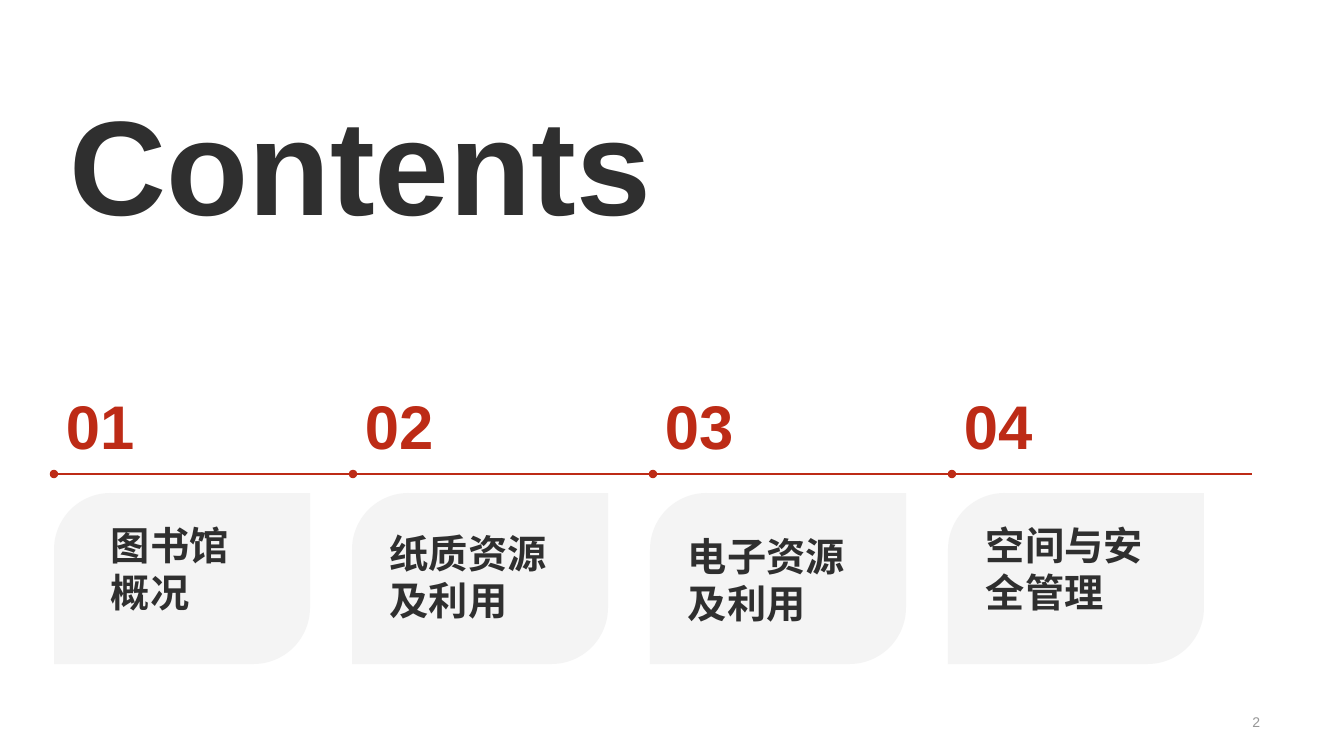
from dataclasses import dataclass

from lxml.etree import SubElement
from pptx import Presentation
from pptx.dml.color import RGBColor
from pptx.enum.shapes import MSO_CONNECTOR, MSO_SHAPE
from pptx.enum.text import MSO_ANCHOR, MSO_AUTO_SIZE, PP_ALIGN
from pptx.oxml.ns import qn
from pptx.util import Pt


@dataclass(frozen=True)
class Theme:
    font: str = "Arial"
    red: RGBColor = RGBColor(0xBD, 0x2B, 0x16)
    ink: RGBColor = RGBColor(0x2F, 0x2F, 0x2F)
    grey: RGBColor = RGBColor(0x97, 0x97, 0x97)
    card: RGBColor = RGBColor(0xCB, 0xCB, 0xCB)
    title_size: int = 96
    number_size: int = 44
    label_size: int = 28
    page_size: int = 10
    line_width: int = 2


theme = Theme()
PX = 914400 / 100.8


def px(*lengths):
    return [round(length * PX) for length in lengths]


def write(box, text, size, color, bold=True, anchor=MSO_ANCHOR.BOTTOM,
          align=PP_ALIGN.LEFT, wrap=True, fit=MSO_AUTO_SIZE.SHAPE_TO_FIT_TEXT):
    frame = box.text_frame
    frame.word_wrap = wrap
    frame.auto_size = fit
    frame.vertical_anchor = anchor
    paragraph = frame.paragraphs[0]
    paragraph.alignment = align
    run = paragraph.add_run()
    run.text = text
    run.font.name = theme.font
    run.font.size = Pt(size)
    run.font.bold = bold
    run.font.color.rgb = color
    return frame


prs = Presentation()
prs.slide_width, prs.slide_height = px(1344, 756)
slide = prs.slides.add_slide(prs.slide_layouts[5])
shapes = slide.shapes

heading = shapes.title
heading.left, heading.top, heading.width, heading.height = px(59, 76, 873, 173)
write(heading, "Contents", theme.title_size, theme.ink, anchor=MSO_ANCHOR.TOP)

page_number = shapes.add_textbox(*px(977, 710, 293, 24))
write(page_number, "2", theme.page_size, theme.grey, bold=False,
      anchor=MSO_ANCHOR.MIDDLE, align=PP_ALIGN.RIGHT, fit=MSO_AUTO_SIZE.NONE)

LEFT = 54
TIMELINE_Y, TIMELINE_WIDTH = 474, 1198
CARD_STEP, CARD_TOP, CARD_WIDTH, CARD_HEIGHT = 298, 493, 256, 171
NUMBER_WIDTH, NUMBER_HEIGHT, NUMBER_INSET = 94, 99, 12
LABEL_HEIGHT = 105

chapters = [
    ("图书馆概况", 162, 515),
    ("纸质资源及利用", 200, 523),
    ("电子资源及利用", 200, 526),
    ("空间与安全管理", 200, 515),
]

for index, (chapter, label_width, label_top) in enumerate(chapters):
    start, end = (LEFT + TIMELINE_WIDTH * i // len(chapters) for i in (index, index + 1))
    segment = shapes.add_connector(
        MSO_CONNECTOR.STRAIGHT, *px(start, TIMELINE_Y, end, TIMELINE_Y))
    segment.line.color.rgb = theme.red
    segment.line.width = Pt(theme.line_width)
    SubElement(segment.line._get_or_add_ln(), qn("a:headEnd"), type="oval")
    SubElement(segment._element.spPr, qn("a:effectLst"))

    number = shapes.add_textbox(
        *px(start, TIMELINE_Y - NUMBER_HEIGHT, NUMBER_WIDTH, NUMBER_HEIGHT))
    frame = write(number, f"{index + 1:02}", theme.number_size, theme.red, wrap=False)
    frame.margin_left, frame.margin_top, frame.margin_right, frame.margin_bottom = px(
        *[NUMBER_INSET] * 4)

    card_left = LEFT + CARD_STEP * index
    card = shapes.add_shape(
        MSO_SHAPE.ROUND_2_DIAG_RECTANGLE,
        *px(card_left, CARD_TOP, CARD_WIDTH, CARD_HEIGHT))
    card.adjustments[0] = 0.33
    card.adjustments[1] = 0
    card.shadow.inherit = False
    card.line.fill.background()
    card.fill.solid()
    card.fill.fore_color.rgb = theme.card
    tint = card._element.spPr.find(qn("a:solidFill")).find(qn("a:srgbClr"))
    SubElement(tint, qn("a:alpha"), val="20000")

    label_left = card_left + (CARD_WIDTH - label_width) // 2
    label = shapes.add_textbox(*px(label_left, label_top, label_width, LABEL_HEIGHT))
    write(label, chapter, theme.label_size, theme.ink)

prs.save("out.pptx")
